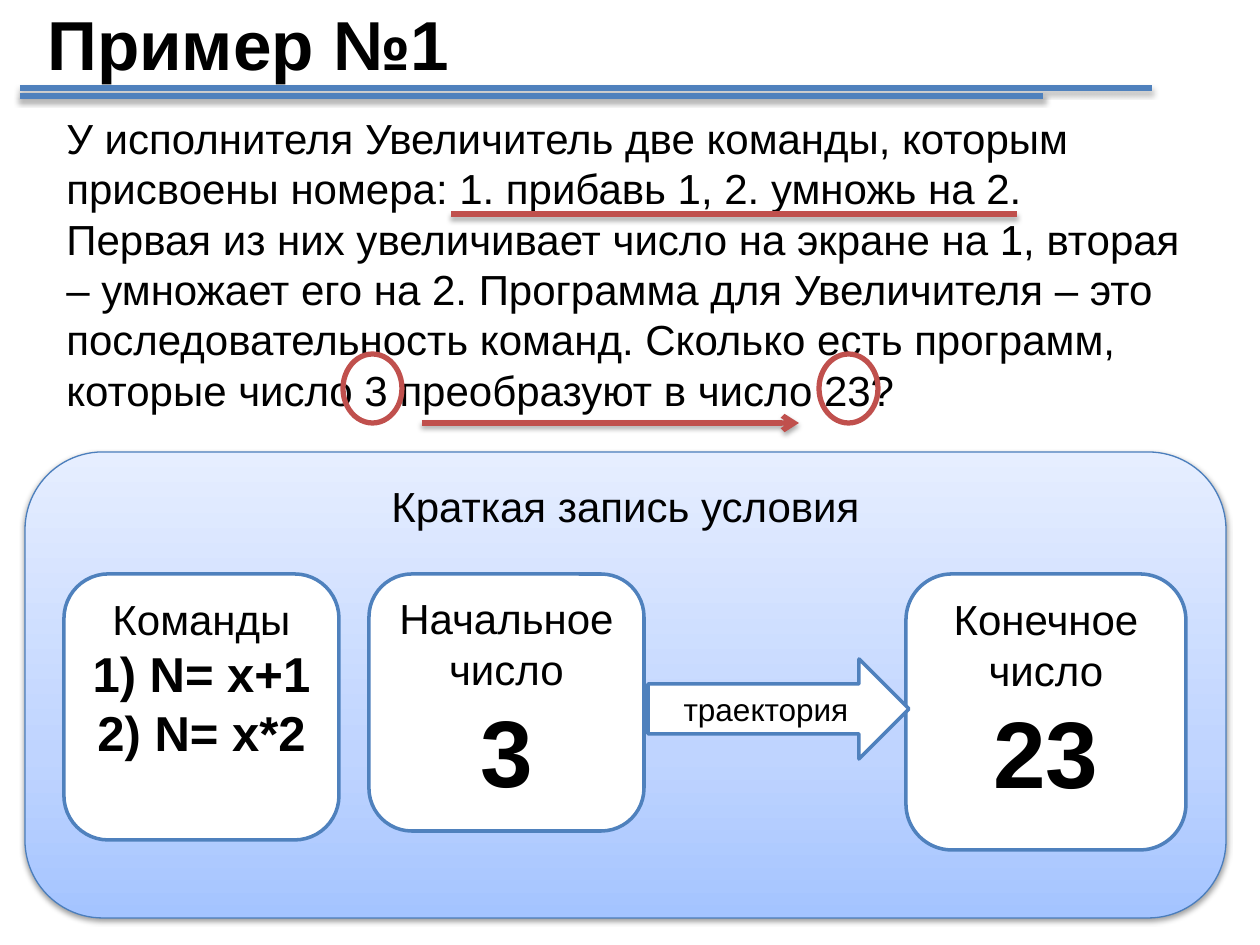
from lxml.etree import SubElement
from pptx import Presentation
from pptx.dml.color import RGBColor
from pptx.enum.shapes import MSO_CONNECTOR, MSO_SHAPE
from pptx.enum.text import MSO_ANCHOR, PP_ALIGN
from pptx.oxml import parse_xml
from pptx.oxml.ns import nsdecls, qn
from pptx.util import Emu, Pt

BLUE, RED, WHITE, BLACK = "4F81BD", "C0504D", "FFFFFF", "000000"


def px(length):
    return Emu(round(length * 914400 / 126))


def color(value):
    return RGBColor.from_string(value)


class SlideBuilder:
    """Draws styled elements on the current slide."""

    font = "Arial"

    def __init__(self, presentation):
        self.slide = presentation.slides.add_slide(presentation.slide_layouts[6])

    def add_paragraphs(self, shape, paragraphs, align=PP_ALIGN.CENTER, anchor=MSO_ANCHOR.TOP):
        frame = shape.text_frame
        frame.word_wrap = True
        frame.vertical_anchor = anchor
        for index, (text, size, bold) in enumerate(paragraphs):
            paragraph = frame.add_paragraph() if index else frame.paragraphs[0]
            paragraph.alignment = align
            run = paragraph.add_run()
            run.text = text
            run.font.name = self.font
            run.font.size = Pt(size)
            run.font.bold = bold
            run.font.color.rgb = color(BLACK)

    def text(self, box, paragraphs, anchor=MSO_ANCHOR.TOP):
        shape = self.slide.shapes.add_textbox(*map(px, box))
        self.add_paragraphs(shape, paragraphs, PP_ALIGN.LEFT, anchor)

    def shape(self, kind, box, paragraphs=(), fill=WHITE, line=BLUE, width=2, anchor=MSO_ANCHOR.TOP):
        shape = self.slide.shapes.add_shape(kind, *map(px, box))
        shape.shadow.inherit = False
        if fill:
            shape.fill.solid()
            shape.fill.fore_color.rgb = color(fill)
        else:
            shape.fill.background()
        shape.line.color.rgb = color(line)
        shape.line.width = Pt(width)
        self.add_paragraphs(shape, paragraphs, anchor=anchor)
        return shape

    def gradient(self, shape, stops):
        properties = shape._element.spPr
        marks = "".join(
            f'<a:gs pos="{position * 1000}"><a:srgbClr val="{value}"/></a:gs>'
            for position, value in stops
        )
        properties.replace(properties.find(qn("a:solidFill")), parse_xml(
            f'<a:gradFill {nsdecls("a")} rotWithShape="1"><a:gsLst>{marks}</a:gsLst>'
            '<a:lin ang="16200000" scaled="0"/></a:gradFill>'
        ))

    def shadow(self, shape, distance, opacity):
        properties = shape._element.spPr
        effects = properties.find(qn("a:effectLst"))
        if effects is None:
            effects = SubElement(properties, qn("a:effectLst"))
        effects.append(parse_xml(
            f'<a:outerShdw {nsdecls("a")} blurRad="{Pt(3.1)}" dist="{Pt(distance)}" '
            f'dir="5400000" rotWithShape="0"><a:srgbClr val="{BLACK}">'
            f'<a:alpha val="{opacity * 1000}"/></a:srgbClr></a:outerShdw>'
        ))

    def line(self, left, right, y, value, arrow=False):
        connector = self.slide.shapes.add_connector(
            MSO_CONNECTOR.STRAIGHT, px(left), px(y), px(right), px(y))
        connector.line.color.rgb = color(value)
        connector.line.width = Pt(3)
        if arrow:
            outline = connector._element.spPr.find(qn("a:ln"))
            SubElement(outline, qn("a:tailEnd"), type="arrow")
        self.shadow(connector, 1.8, 35)


def main():
    presentation = Presentation()
    presentation.slide_width, presentation.slide_height = px(1260), px(945)
    builder = SlideBuilder(presentation)

    builder.text((54, 106, 1171, 357), [
        ("У исполнителя Увеличитель две команды, которым присвоены номера: "
         "1. прибавь 1, 2. умножь на 2.", 24, False),
        ("Первая из них увеличивает число на экране на 1, вторая – умножает его на 2. "
         "Программа для Увеличителя – это последовательность команд. Сколько есть "
         "программ, которые число 3 преобразуют в число 23?", 24, False),
    ])

    panel = builder.shape(
        MSO_SHAPE.ROUNDED_RECTANGLE, (25, 452, 1201, 466),
        [("Краткая запись условия", 24, False)], line="4B7EBC", width=0.75)
    builder.gradient(panel, [(0, "A4C4FF"), (35, "BFD4FF"), (100, "E6EEFF")])
    builder.shadow(panel, 1.6, 38)

    cards = [
        (64, 275, 266, "Команды", [("1) N= x+1", 28, True), ("2) N= x*2", 28, True)]),
        (369, 275, 257, "Начальное число", [("3", 54, True)]),
        (906, 280, 276, "Конечное число", [("23", 54, True)]),
    ]
    for left, width, height, heading, values in cards:
        builder.shape(MSO_SHAPE.ROUNDED_RECTANGLE, (left, 574, width, height),
                      [(heading, 24, False), *values])
    builder.shape(MSO_SHAPE.RIGHT_ARROW, (648, 659, 261, 100),
                  [("траектория", 18, False)], anchor=MSO_ANCHOR.MIDDLE)

    builder.line(451, 1017, 214, RED)
    for left in (343, 819):
        builder.shape(MSO_SHAPE.OVAL, (left, 354, 59, 69), fill=None, line=RED, width=3)
    builder.line(422, 799, 423, RED, arrow=True)

    builder.text((35, 0, 1134, 86), [("Пример №1", 39.6, True)], MSO_ANCHOR.MIDDLE)
    for right, y in ((1152, 88), (1043, 96)):
        builder.line(20, right, y, BLUE)

    presentation.save("out.pptx")


if __name__ == "__main__":
    main()
